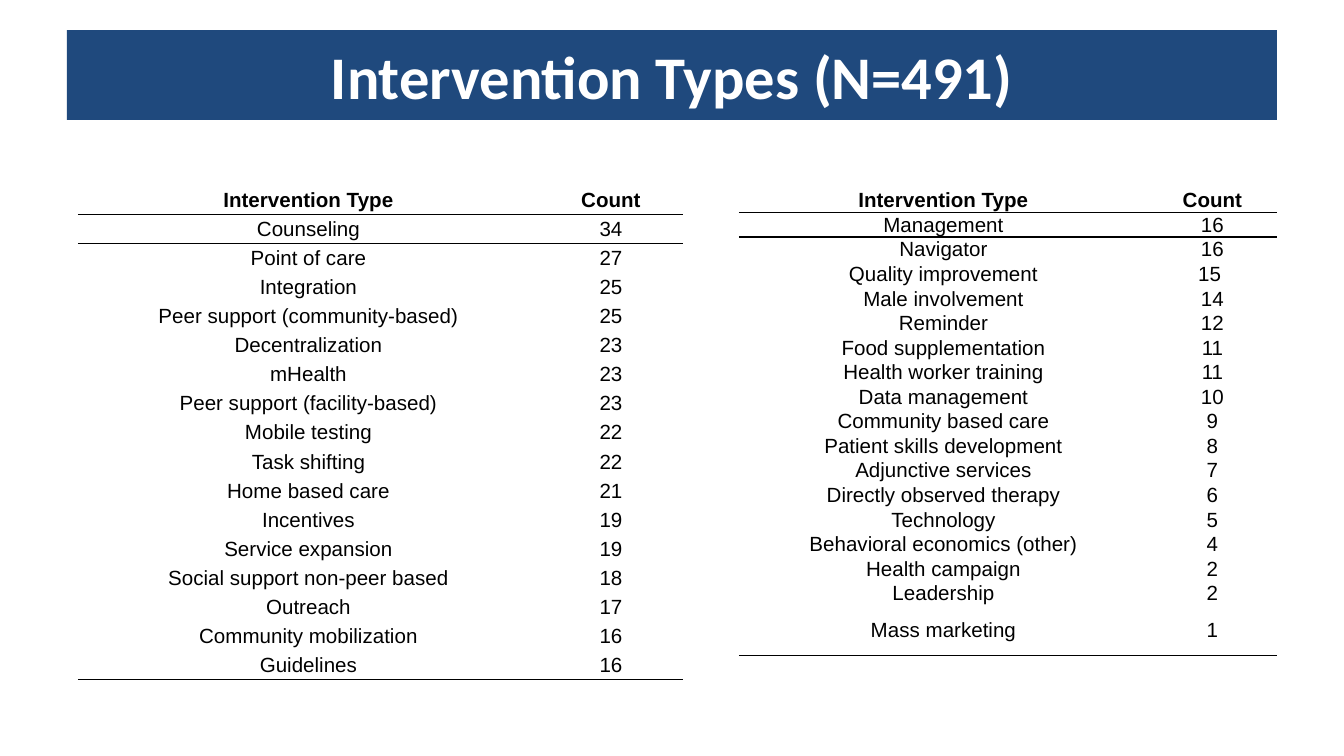
from lxml import etree
from pptx import Presentation
from pptx.dml.color import RGBColor
from pptx.enum.text import MSO_ANCHOR as Anchor, MSO_AUTO_SIZE as AutoSize, PP_ALIGN as Align
from pptx.oxml.ns import qn
from pptx.util import Emu, Pt

SCALE = 914400 / 134.4
NO_STYLE_NO_GRID = "{2D5ABB26-0587-4C30-8999-92F81FD0307C}"

LEFT_COUNTS = [
    ("Counseling", "34"),
    ("Point of care", "27"),
    ("Integration", "25"),
    ("Peer support (community-based)", "25"),
    ("Decentralization", "23"),
    ("mHealth", "23"),
    ("Peer support (facility-based)", "23"),
    ("Mobile testing", "22"),
    ("Task shifting", "22"),
    ("Home based care", "21"),
    ("Incentives", "19"),
    ("Service expansion", "19"),
    ("Social support non-peer based", "18"),
    ("Outreach", "17"),
    ("Community mobilization", "16"),
    ("Guidelines", "16"),
]
RIGHT_COUNTS = [
    ("Management", "16"),
    ("Navigator", "16"),
    ("Quality improvement", "15 "),
    ("Male involvement", "14"),
    ("Reminder", "12"),
    ("Food supplementation", "11"),
    ("Health worker training", "11"),
    ("Data management", "10"),
    ("Community based care", "9"),
    ("Patient skills development", "8"),
    ("Adjunctive services", "7"),
    ("Directly observed therapy", "6"),
    ("Technology", "5"),
    ("Behavioral economics (other)", "4"),
    ("Health campaign", "2"),
    ("Leadership", "2"),
    ("Mass marketing", "1"),
]


def px(length):
    return Emu(round(length * SCALE))


def color(value):
    return RGBColor.from_string(value)


class SlideBuilder:
    navy, white, black = "1F497D", "FFFFFF", "000000"
    title_font, table_font = "Calibri", "Arial"

    def __init__(self, slide):
        self.slide = slide

    def format_text(self, text_frame, font_name, size, text_color, bold):
        paragraph = text_frame.paragraphs[0]
        paragraph.alignment = Align.CENTER
        font = paragraph.runs[0].font
        font.name, font.size, font.bold = font_name, Pt(size), bold
        font.color.rgb = color(text_color)

    def title(self, text, left, top, width, height):
        shape = self.slide.shapes.title
        shape.left, shape.top, shape.width, shape.height = map(px, (left, top, width, height))
        shape.fill.solid()
        shape.fill.fore_color.rgb = color(self.navy)
        text_frame = shape.text_frame
        text_frame.text = text
        text_frame.auto_size = AutoSize.NONE
        text_frame.vertical_anchor = Anchor.MIDDLE
        self.format_text(text_frame, self.title_font, 32.4, self.white, True)

    def border(self, cell, side, width):
        line = etree.Element(qn(f"a:ln{side}"), w=str(Pt(width)))
        fill = etree.SubElement(line, qn("a:solidFill"))
        etree.SubElement(fill, qn("a:srgbClr"), val=self.black)
        cell._tc.get_or_add_tcPr().insert(0, line)

    def cell(self, cell, text, bold):
        cell.text = text
        cell.fill.background()
        cell.vertical_anchor = Anchor.MIDDLE
        cell.margin_left = cell.margin_right = cell.margin_top = px(1)
        cell.margin_bottom = 0
        self.format_text(cell.text_frame, self.table_font, 11, self.black, bold)

    def count_table(self, counts, left, top, column_widths, height, last_height, header_line):
        rows = [("Intervention Type", "Count"), *counts]
        last = len(rows) - 1
        frame = self.slide.shapes.add_table(
            len(rows), 2, px(left), px(top), px(sum(column_widths)), px(height))
        table = frame.table
        table.first_row = table.horz_banding = False
        table._tbl.tblPr.find(qn("a:tableStyleId")).text = NO_STYLE_NO_GRID
        for column, width in zip(table.columns, column_widths):
            column.width = px(width)

        # Equal rows share what the last one leaves
        row_height = (height - last_height) / last
        for index, values in enumerate(rows):
            table.rows[index].height = px(last_height if index == last else row_height)
            for column, value in enumerate(values):
                cell = table.cell(index, column)
                self.cell(cell, value, index == 0)
                if index == 0:
                    self.border(cell, "B", header_line)
                elif index == 1:
                    self.border(cell, "T", header_line)
                elif index == last:
                    self.border(cell, "B", 1)


def main():
    presentation = Presentation()
    presentation.slide_width, presentation.slide_height = px(1344), px(756)
    builder = SlideBuilder(presentation.slides.add_slide(presentation.slide_layouts[5]))

    # Title band
    builder.title("Intervention Types (N=491)", 67, 30, 1210, 90)

    # Most frequent types on the left, the rest on the right
    builder.count_table(LEFT_COUNTS, 78, 185, (461, 144), 495, 29, 0.5)
    builder.count_table(RIGHT_COUNTS, 739, 188, (409, 129), 468, 50, 1)

    presentation.save("out.pptx")


if __name__ == "__main__":
    main()
